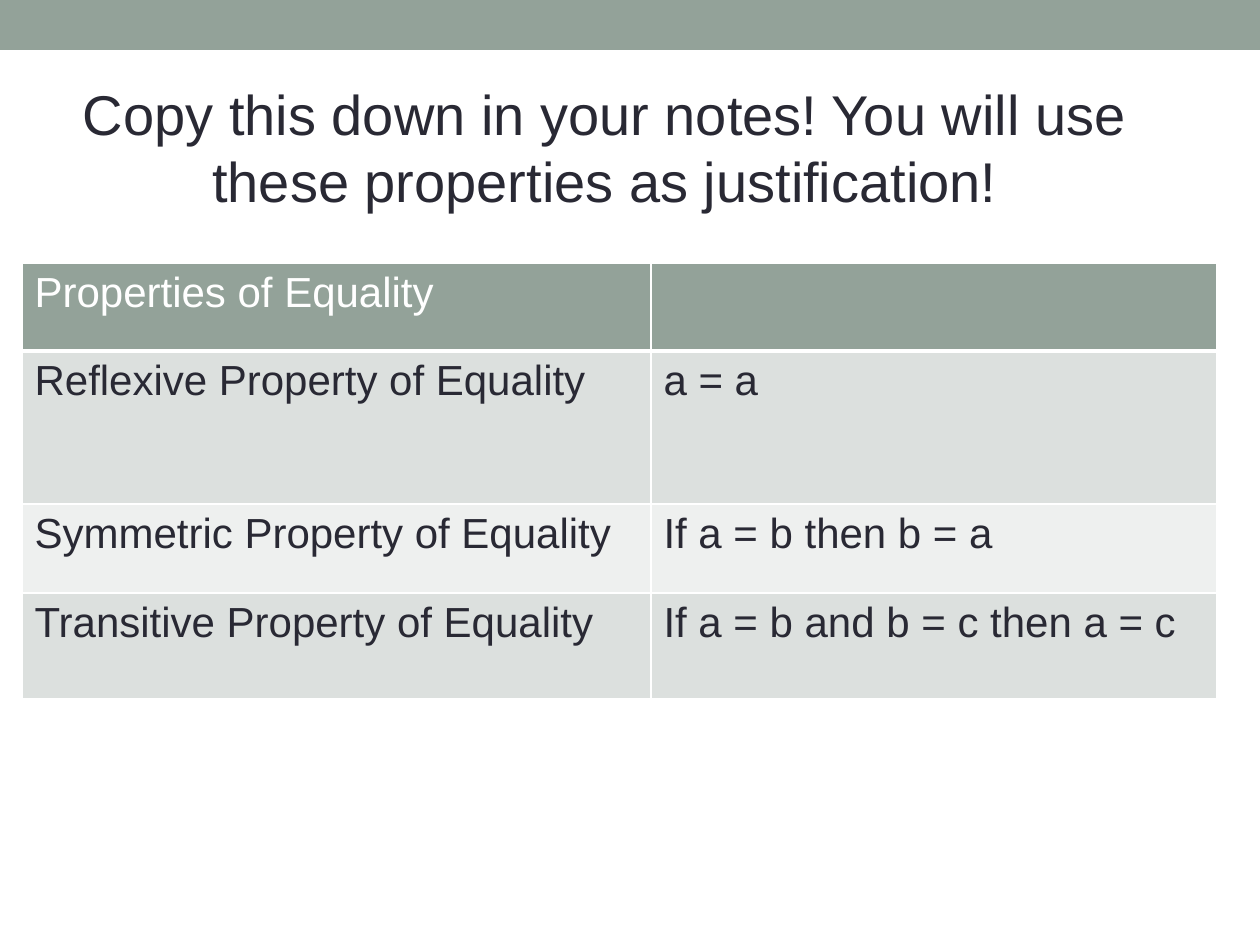
import pptx
import pptx.dml.color
import pptx.enum.shapes
import pptx.enum.text
import pptx.oxml
import pptx.oxml.ns
import pptx.util

SAGE, DARK, WHITE = "93A299", "292934", "FFFFFF"
BANDS = ("DCE0DE", "EEF0EF")
PROPERTIES = [
    ("Properties of Equality", ""),
    ("Reflexive Property of Equality", "a = a"),
    ("Symmetric Property of Equality", "If a = b then b = a"),
    ("Transitive Property of Equality", "If a = b and b = c then a = c"),
]


def px(length):
    return pptx.util.Emu(round(length * 914400 / 126))


def color(value):
    return pptx.dml.color.RGBColor.from_string(value)


class SlideBuilder:
    """Holds the text style and the slide being filled."""

    font_name = "Arial"

    def __init__(self, slide):
        self.slide = slide

    def style(self, paragraph, size, text_color):
        paragraph.font.name = self.font_name
        paragraph.font.size = pptx.util.Pt(size)
        paragraph.font.color.rgb = color(text_color)

    def bar(self, left, top, width, height, fill):
        shape = self.slide.shapes.add_shape(
            pptx.enum.shapes.MSO_SHAPE.RECTANGLE, px(left), px(top), px(width), px(height))
        shape.shadow.inherit = False
        shape.fill.solid()
        shape.fill.fore_color.rgb = color(fill)
        shape.line.fill.background()

    def title(self, text, left, top, width, height):
        frame = self.slide.shapes.add_textbox(px(left), px(top), px(width), px(height)).text_frame
        frame.word_wrap = True
        frame.auto_size = pptx.enum.text.MSO_AUTO_SIZE.SHAPE_TO_FIT_TEXT
        paragraph = frame.paragraphs[0]
        paragraph.text = text
        paragraph.alignment = pptx.enum.text.PP_ALIGN.CENTER
        self.style(paragraph, 32, DARK)

    def borders(self, cell, bottom_width):
        properties = cell._tc.get_or_add_tcPr()
        widths = {"lnL": 1, "lnR": 1, "lnT": 1, "lnB": bottom_width}
        for position, (side, width) in enumerate(widths.items()):
            properties.insert(position, pptx.oxml.parse_xml(
                f'<a:{side} {pptx.oxml.ns.nsdecls("a")} w="{pptx.util.Pt(width)}">'
                f'<a:solidFill><a:srgbClr val="{WHITE}"/></a:solidFill></a:{side}>'))

    def table(self, rows, left, top, widths, heights):
        table = self.slide.shapes.add_table(
            len(rows), len(widths), px(left), px(top), px(sum(widths)), px(sum(heights))).table
        for column, width in zip(table.columns, widths):
            column.width = px(width)
        for row_index, (texts, height) in enumerate(zip(rows, heights)):
            is_header = row_index == 0
            table.rows[row_index].height = px(height)
            for column_index, text in enumerate(texts):
                cell = table.cell(row_index, column_index)
                cell.fill.solid()
                cell.fill.fore_color.rgb = color(SAGE if is_header else BANDS[(row_index - 1) % 2])
                self.borders(cell, 3 if is_header else 1)
                paragraph = cell.text_frame.paragraphs[0]
                paragraph.text = text
                self.style(paragraph, 24, WHITE if is_header else DARK)


def main():
    presentation = pptx.Presentation()
    presentation.slide_width, presentation.slide_height = px(1260), px(945)
    builder = SlideBuilder(presentation.slides.add_slide(presentation.slide_layouts[6]))
    builder.bar(0, 0, 1260, 50, SAGE)
    builder.table(PROPERTIES, 22, 263, widths=(629, 566), heights=(88, 153, 89, 106))
    builder.title("Copy this down in your notes! You will use these properties as justification!",
                  22, 73, 1166, 149)
    presentation.save("out.pptx")


if __name__ == "__main__":
    main()
